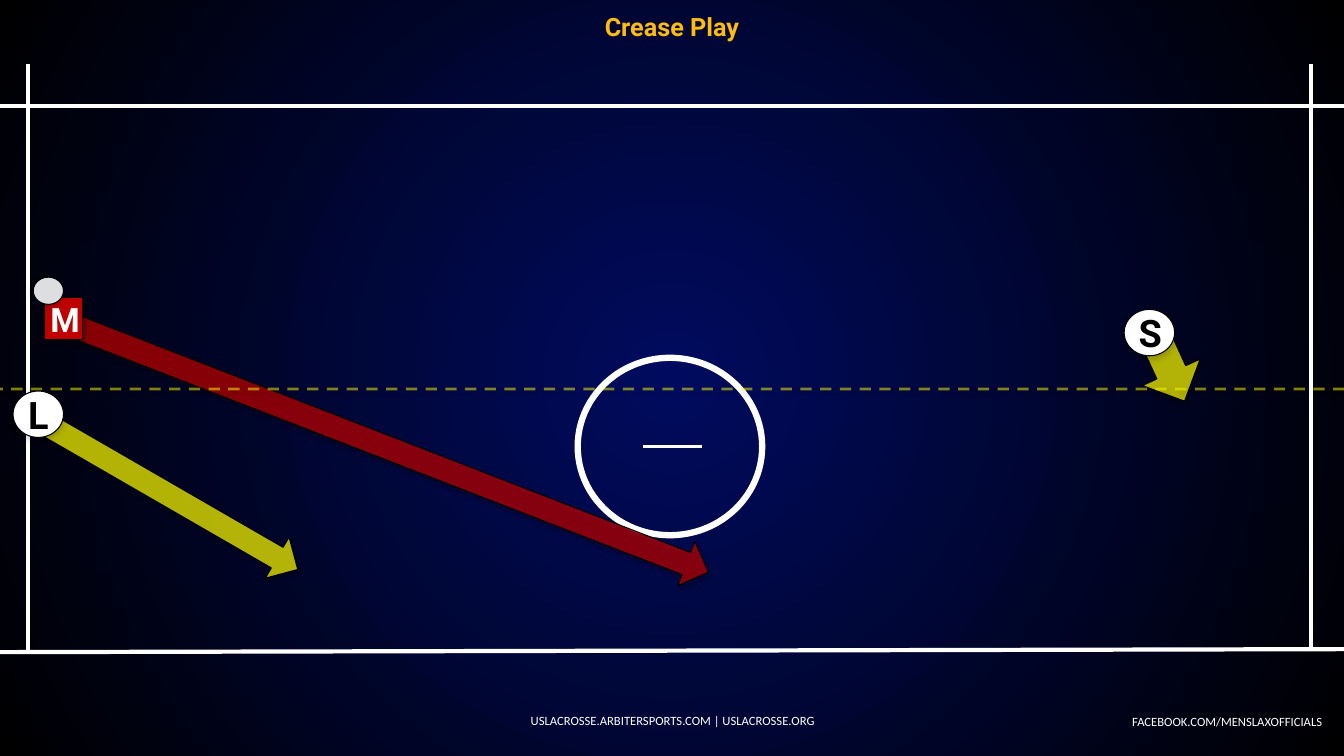
from dataclasses import dataclass
from typing import Optional

from lxml.etree import SubElement
from pptx import Presentation
from pptx.dml.color import RGBColor
from pptx.enum.dml import MSO_LINE_DASH_STYLE as Dash
from pptx.enum.shapes import MSO_CONNECTOR_TYPE as Connector
from pptx.enum.shapes import MSO_SHAPE as Shape
from pptx.enum.text import MSO_ANCHOR as Anchor
from pptx.enum.text import MSO_AUTO_SIZE as AutoSize
from pptx.enum.text import PP_ALIGN as Align
from pptx.oxml.ns import qn
from pptx.util import Inches, Pt

WHITE = RGBColor(0xFF, 0xFF, 0xFF)
BLACK = RGBColor(0x00, 0x00, 0x00)
NAVY = RGBColor(0x00, 0x0B, 0x5F)
YELLOW = RGBColor(0xFF, 0xFF, 0x00)
RED = RGBColor(0xC0, 0x00, 0x00)
GOLD = RGBColor(0xFE, 0xBC, 0x11)
BALL_GREY = RGBColor(0xDC, 0xDE, 0xE0)

WIDTH, HEIGHT = 13.33, 7.5
GOAL_LINE_LEFT, GOAL_LINE_RIGHT = 0.28, 13


@dataclass(frozen=True)
class Shadow:
    opacity: int
    blur: float
    distance: float


@dataclass(frozen=True)
class Line:
    start: tuple[float, float]
    end: tuple[float, float]
    weight: float = 3


@dataclass(frozen=True)
class Arrow:
    box: tuple[float, float, float, float]
    rotation: float
    color: RGBColor


@dataclass(frozen=True)
class Marker:
    kind: Shape
    box: tuple[float, float, float, float]
    fill: RGBColor
    shadow: Shadow
    letter: str = ""
    size: float = 27
    color: RGBColor = BLACK
    inset: float = 0.07


ARROW_SHADOW = Shadow(35, 3.1, 1.8)
DASH_SHADOW = Shadow(38, 3.1, 1.6)
SOFT_SHADOW = Shadow(20, 5, 2)
STRONG_SHADOW = Shadow(50, 5, 2)

FIELD_LINES = [
    Line((GOAL_LINE_LEFT, 6.46), (GOAL_LINE_LEFT, 0.64)),
    Line((0, 1.05), (WIDTH, 1.05)),
    Line((0, 6.47), (WIDTH, 6.44)),
    Line((GOAL_LINE_RIGHT, 6.46), (GOAL_LINE_RIGHT, 0.64)),
    Line((6.38, 4.43), (6.96, 4.43), 2.25),
]
CENTER_LINE = Line((-0.28, 3.86), (14.01, 3.86), 2)
ARROWS = [
    Arrow((11.21, 3.32, 0.76, 0.63), 65.3, YELLOW),
    Arrow((0.21, 4.68, 2.94, 0.47), 30, YELLOW),
    Arrow((0.34, 4.19, 6.92, 0.47), 21.2, RED),
]
MARKERS = [
    Marker(Shape.OVAL, (0.13, 3.88, 0.5, 0.46), WHITE, SOFT_SHADOW, "L"),
    Marker(Shape.OVAL, (11.15, 3.07, 0.5, 0.46), WHITE, SOFT_SHADOW, "S"),
    Marker(Shape.RECTANGLE, (0.44, 2.95, 0.38, 0.42), RED, STRONG_SHADOW,
           "M", 24, WHITE, 0.06),
    Marker(Shape.OVAL, (0.33, 2.75, 0.3, 0.27), BALL_GREY, SOFT_SHADOW),
]


def set_opacity(properties, percent: int) -> None:
    color = properties.find(qn("a:solidFill"))[0]
    SubElement(color, qn("a:alpha"), val=str(percent * 1000))


def add_shadow(effects, shadow: Shadow) -> None:
    outer = SubElement(effects, qn("a:outerShdw"), blurRad=str(Pt(shadow.blur)),
                       dist=str(Pt(shadow.distance)), dir="5400000", rotWithShape="0")
    color = SubElement(outer, qn("a:srgbClr"), val=str(BLACK))
    SubElement(color, qn("a:alpha"), val=str(shadow.opacity * 1000))


def paint_background(slide) -> None:
    fill = slide.background.fill
    fill.gradient()
    for stop, color, position in zip(fill.gradient_stops, (NAVY, BLACK), (0, 1)):
        stop.color.rgb = color
        stop.position = position
    gradient = slide.element.find(".//" + qn("a:gradFill"))
    gradient.remove(gradient.find(qn("a:lin")))
    circle = SubElement(gradient, qn("a:path"), path="circle")
    SubElement(circle, qn("a:fillToRect"), l="50000", t="50000", r="50000", b="50000")


def draw_line(slide, line: Line, color: RGBColor = WHITE,
              dashed: bool = False, shadow: Optional[Shadow] = None) -> None:
    ends = [Inches(value) for value in line.start + line.end]
    connector = slide.shapes.add_connector(Connector.STRAIGHT, *ends)
    connector.line.color.rgb = color
    connector.line.width = Pt(line.weight)
    properties = connector.element.spPr
    if dashed:
        connector.line.dash_style = Dash.DASH
        set_opacity(properties.find(qn("a:ln")), 50)
    effects = SubElement(properties, qn("a:effectLst"))
    if shadow:
        add_shadow(effects, shadow)


def draw_shape(slide, kind: Shape, box: tuple, fill: Optional[RGBColor],
               outline: RGBColor = BLACK, weight: float = 0.75,
               shadow: Optional[Shadow] = None):
    shape = slide.shapes.add_shape(kind, *(Inches(value) for value in box))
    shape.shadow.inherit = False
    if fill is None:
        shape.fill.background()
    else:
        shape.fill.solid()
        shape.fill.fore_color.rgb = fill
    shape.line.color.rgb = outline
    shape.line.width = Pt(weight)
    if shadow:
        add_shadow(shape.element.spPr.find(qn("a:effectLst")), shadow)
    return shape


def write(frame, text: str, size: float, color: RGBColor, font: str,
          bold: bool = False, align: Align = Align.CENTER) -> None:
    frame.vertical_anchor = Anchor.MIDDLE
    paragraph = frame.paragraphs[0]
    paragraph.alignment = align
    run = paragraph.add_run()
    run.text = text
    run.font.name = font
    run.font.size = Pt(size)
    run.font.bold = bold
    run.font.color.rgb = color


def draw_arrow(slide, arrow: Arrow) -> None:
    shape = draw_shape(slide, Shape.RIGHT_ARROW, arrow.box, arrow.color,
                       shadow=ARROW_SHADOW)
    shape.rotation = arrow.rotation
    set_opacity(shape.element.spPr, 70)


def draw_marker(slide, marker: Marker) -> None:
    shape = draw_shape(slide, marker.kind, marker.box, marker.fill, shadow=marker.shadow)
    if marker.letter:
        frame = shape.text_frame
        frame.margin_left = frame.margin_right = Inches(marker.inset)
        frame.margin_top = frame.margin_bottom = Inches(marker.inset)
        write(frame, marker.letter, marker.size, marker.color, "Roboto", True)


def draw_address(slide, box: tuple, text: str, align: Align, wrap: bool) -> None:
    frame = slide.shapes.add_textbox(*(Inches(value) for value in box)).text_frame
    frame.word_wrap = wrap
    write(frame, text, 9, WHITE, "Calibri", align=align)


def main() -> None:
    presentation = Presentation()
    presentation.slide_width = Inches(WIDTH)
    presentation.slide_height = Inches(HEIGHT)
    slide = presentation.slides.add_slide(presentation.slide_layouts[5])
    paint_background(slide)

    title = slide.shapes.title
    title.left, title.top = Inches(0), Inches(0.05)
    title.width, title.height = Inches(WIDTH), Inches(0.42)
    title.text_frame.auto_size = AutoSize.NONE
    write(title.text_frame, "Crease Play", 18, GOLD, "Roboto", True)

    for line in FIELD_LINES:
        draw_line(slide, line)
    draw_shape(slide, Shape.OVAL, (5.73, 3.55, 1.83, 1.76), None, WHITE, 4.5)
    draw_address(slide, (11.09, 7.03, 2.12, 0.25), "FACEBOOK.COM/MENSLAXOFFICIALS",
                 Align.RIGHT, False)
    for arrow in ARROWS:
        draw_arrow(slide, arrow)
    draw_line(slide, CENTER_LINE, YELLOW, True, DASH_SHADOW)
    for marker in MARKERS:
        draw_marker(slide, marker)
    draw_address(slide, (4.56, 6.95, 4.22, 0.4),
                 "USLACROSSE.ARBITERSPORTS.COM | USLACROSSE.ORG", Align.CENTER, True)
    presentation.save("out.pptx")


if __name__ == "__main__":
    main()
